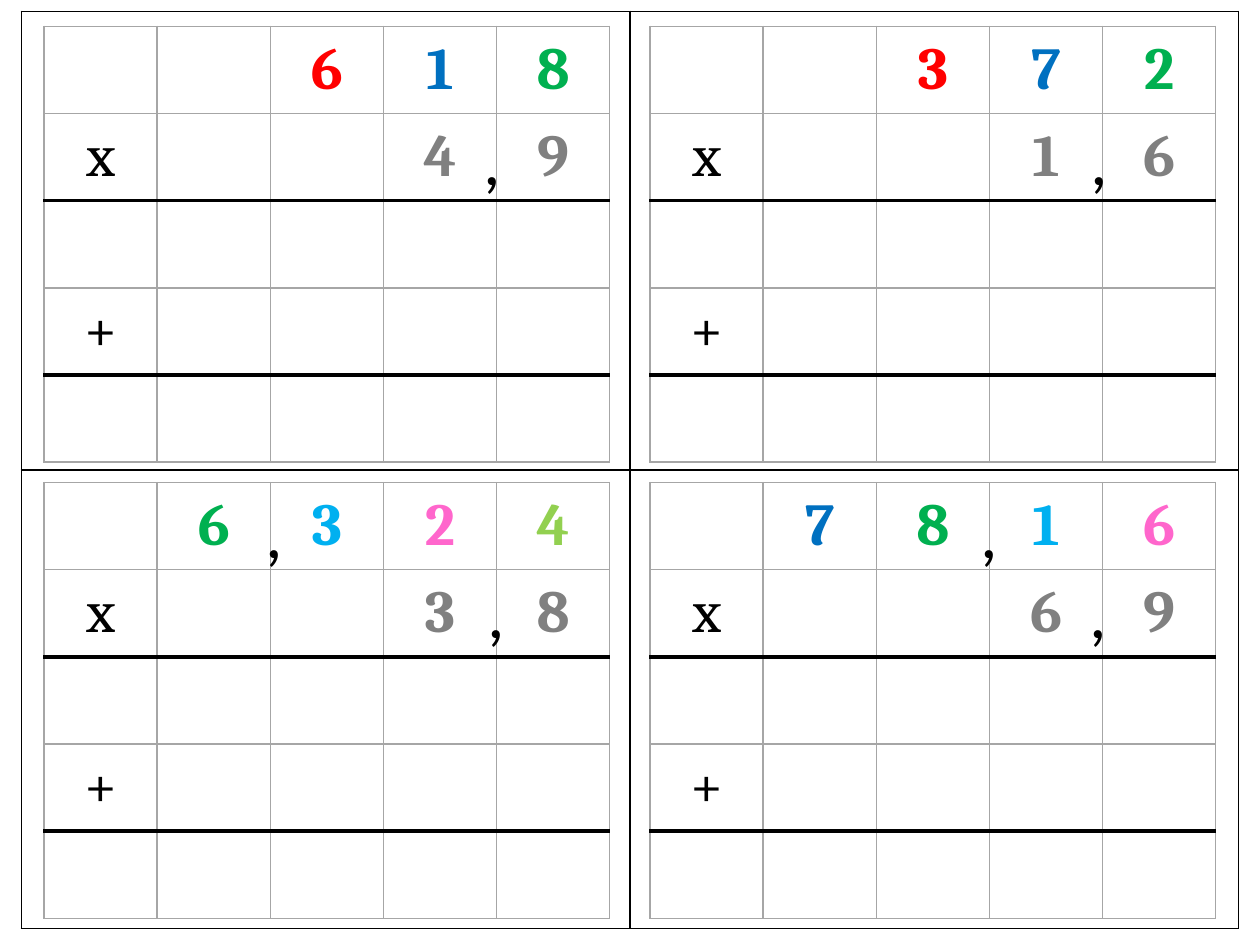
from lxml.etree import SubElement
from pptx import Presentation
from pptx.dml.color import RGBColor
from pptx.enum.text import MSO_ANCHOR as Anchor, MSO_AUTO_SIZE as AutoSize, PP_ALIGN as Align
from pptx.oxml.ns import qn
from pptx.util import Inches, Pt

COLOURS = {
    "white": "FFFFFF", "black": "000000", "rule": "A6A6A6", "grey": "808080",
    "red": "FF0000", "blue": "0070C0", "green": "00B050",
    "sky": "00B0F0", "pink": "FF66CC", "lime": "92D050",
}
GRID_LEFTS = (0.35, 5.16)
GRID_TOPS = (0.21, 3.83)
GRID_SIZE = (4.49, 3.46)
WHOLE = ("red", "blue", "green")
PROBLEMS = [
    [("618", WHOLE, "49"), ("372", WHOLE, "16")],
    [("6324", ("green", "sky", "pink", "lime"), "38"),
     ("7816", ("blue", "green", "sky", "pink"), "69")],
]
COMMAS = [(8.55, 4.46), (7.68, 3.83), (3.77, 4.46),
          (2.01, 3.83), (8.56, 0.87), (3.74, 0.87)]


class Worksheet:
    digit_font, digit_size = "Cambria", 34
    comma_font, comma_size = "Calibri", 40
    thin, thick = 1, 2.25

    def __init__(self, slide):
        self.slide = slide

    def style(self, paragraph, font_name, size, colour, bold=False):
        for run in paragraph.runs:
            run.font.name = font_name
            run.font.size = Pt(size)
            run.font.bold = bold
            run.font.color.rgb = RGBColor.from_string(COLOURS[colour])

    def borders(self, cell, **sides):
        properties = cell._tc.get_or_add_tcPr()
        for position, side in enumerate("LRTB"):
            colour, width = sides.get(side, sides["every"])
            line = SubElement(properties, qn(f"a:ln{side}"), w=str(Pt(width)))
            fill = SubElement(line, qn("a:solidFill"))
            SubElement(fill, qn("a:srgbClr"), val=COLOURS[colour])
            properties.insert(position, line)

    def table(self, left, top, width, height, rows, columns):
        table = self.slide.shapes.add_table(
            rows, columns, Inches(left), Inches(top), Inches(width), Inches(height)).table
        table.first_row = table.horz_banding = False
        for cell in table.iter_cells():
            cell.fill.solid()
            cell.fill.fore_color.rgb = RGBColor.from_string(COLOURS["white"])
            cell.vertical_anchor = Anchor.MIDDLE
        return table

    def frame(self, left, top, width, height):
        for cell in self.table(left, top, width, height, 2, 2).iter_cells():
            self.borders(cell, every=("black", self.thin))

    def symbol(self, cell, character, colour, bold):
        cell.text_frame.text = character
        paragraph = cell.text_frame.paragraphs[0]
        paragraph.alignment = Align.CENTER
        self.style(paragraph, self.digit_font, self.digit_size, colour, bold)

    def multiplication(self, left, top, factor, factor_colours, multiplier):
        grid = self.table(left, top, *GRID_SIZE, 5, 5)
        light, heavy = ("rule", self.thin), ("black", self.thick)
        for row in range(5):
            for column in range(5):
                self.borders(grid.cell(row, column), every=light,
                             T=heavy if row in (2, 4) else light,
                             B=heavy if row in (1, 3) else light)
        for column, digit, colour in zip(range(5 - len(factor), 5), factor, factor_colours):
            self.symbol(grid.cell(0, column), digit, colour, True)
        for column, digit in enumerate(multiplier, 5 - len(multiplier)):
            self.symbol(grid.cell(1, column), digit, "grey", True)
        for row, operator in ((1, "x"), (3, "+")):
            self.symbol(grid.cell(row, 0), operator, "black", False)

    def comma(self, left, top):
        box = self.slide.shapes.add_textbox(
            Inches(left), Inches(top), Inches(0.31), Inches(0.77))
        box.text_frame.text = ","
        box.text_frame.word_wrap = False
        box.text_frame.auto_size = AutoSize.SHAPE_TO_FIT_TEXT
        self.style(box.text_frame.paragraphs[0], self.comma_font, self.comma_size, "black")


def main():
    deck = Presentation()
    deck.slide_width, deck.slide_height = Inches(10), Inches(7.5)
    sheet = Worksheet(deck.slides.add_slide(deck.slide_layouts[6]))
    sheet.frame(0.17, 0.09, 9.66, 7.28)
    for top, problem_row in zip(GRID_TOPS, PROBLEMS):
        for left, problem in zip(GRID_LEFTS, problem_row):
            sheet.multiplication(left, top, *problem)
    for left, top in COMMAS:
        sheet.comma(left, top)
    deck.save("out.pptx")


if __name__ == "__main__":
    main()
